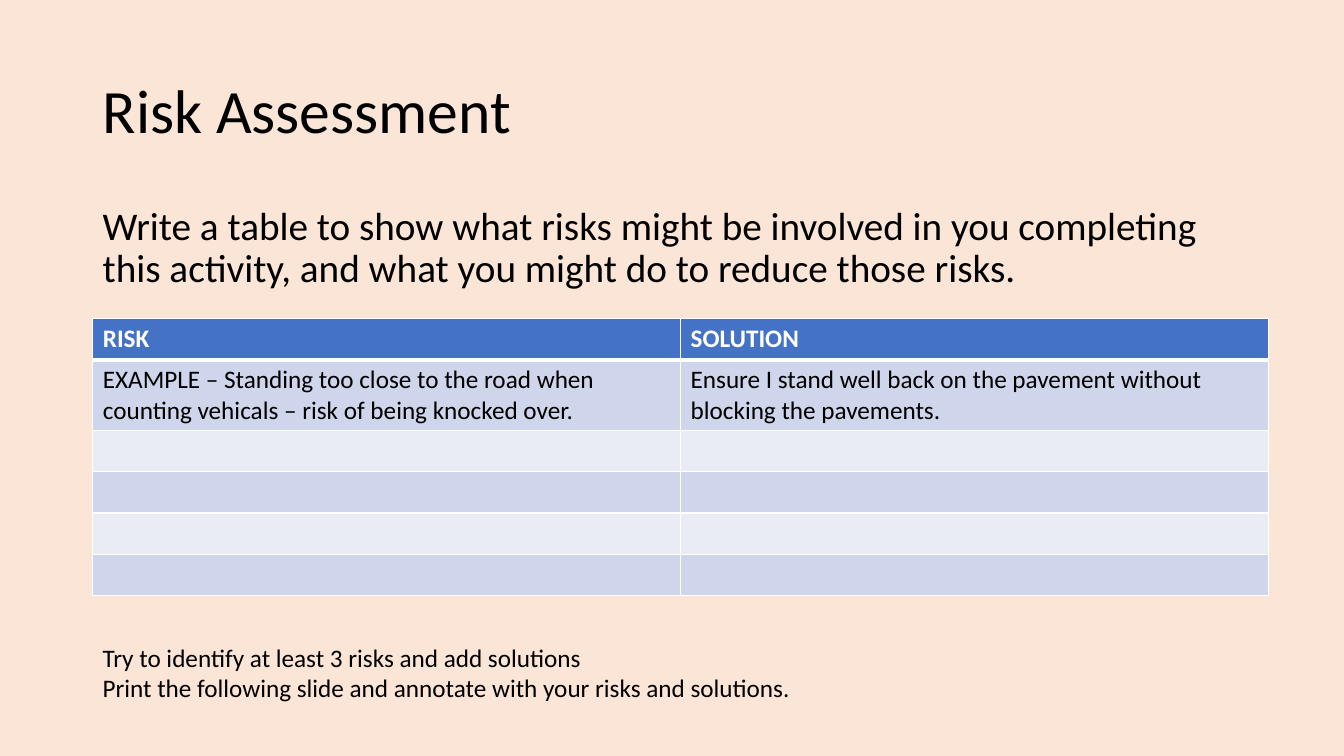
from dataclasses import dataclass

from lxml import etree
from pptx import Presentation
from pptx.dml.color import RGBColor
from pptx.enum.text import MSO_ANCHOR
from pptx.oxml.ns import qn
from pptx.slide import Slide
from pptx.table import _Cell
from pptx.text.text import _Paragraph
from pptx.util import Inches, Pt

MIDDLE, TOP = MSO_ANCHOR.MIDDLE, MSO_ANCHOR.TOP
BLANK_LAYOUT = 6
FONT = "Calibri"

PEACH = RGBColor(0xFB, 0xE5, 0xD6)
BLACK = RGBColor(0x00, 0x00, 0x00)
WHITE = RGBColor(0xFF, 0xFF, 0xFF)
HEADER_BLUE = RGBColor(0x44, 0x72, 0xC4)
BAND_DARK = RGBColor(0xCF, 0xD5, 0xEA)
BAND_LIGHT = RGBColor(0xE9, 0xEB, 0xF5)

LEFT = 0.92
ROW_HEIGHT = 0.41
COLUMN_WIDTH = 5.83


@dataclass(frozen=True)
class TextBlock:
    top: float
    width: float
    height: float
    size: int
    lines: tuple[str, ...]
    line_spacing: float = 1.0
    anchor: MSO_ANCHOR = TOP


TEXT_BLOCKS = (
    TextBlock(0.4, 11.5, 1.45, 44, ("Risk Assessment",), 0.9, MIDDLE),
    TextBlock(2, 11.5, 4.76, 28, (
        "Write a table to show what risks might be involved in you completing "
        "this activity, and what you might do to reduce those risks.",
    ), 0.9),
    TextBlock(6.32, 11.67, 0.71, 18, (
        "Try to identify at least 3 risks and add solutions",
        "Print the following slide and annotate with your risks and solutions.",
    )),
)

RISK_ROWS = (
    ("RISK", "SOLUTION"),
    ("EXAMPLE – Standing too close to the road when counting vehicals – risk of being knocked over.",
     "Ensure I stand well back on the pavement without blocking the pavements."),
) + (("", ""),) * 4


def add_run(paragraph: _Paragraph, text: str, size: int, color: RGBColor, bold: bool = False) -> None:
    run = paragraph.add_run()
    run.text = text
    run.font.name = FONT
    run.font.size = Pt(size)
    run.font.bold = bold
    run.font.color.rgb = color


def add_text_block(slide: Slide, block: TextBlock) -> None:
    shape = slide.shapes.add_textbox(
        Inches(LEFT), Inches(block.top), Inches(block.width), Inches(block.height))
    frame = shape.text_frame
    frame.word_wrap = True
    frame.vertical_anchor = block.anchor
    for index, line in enumerate(block.lines):
        paragraph = frame.add_paragraph() if index else frame.paragraphs[0]
        paragraph.line_spacing = block.line_spacing
        add_run(paragraph, line, block.size, BLACK)


def set_borders(cell: _Cell, top: int, bottom: int) -> None:
    """Draw white cell borders; top and bottom are widths in points."""
    properties = cell._tc.get_or_add_tcPr()
    for side, width in (("L", 1), ("R", 1), ("T", top), ("B", bottom)):
        line = etree.SubElement(properties, qn(f"a:ln{side}"), w=str(Pt(width)))
        fill = etree.SubElement(line, qn("a:solidFill"))
        etree.SubElement(fill, qn("a:srgbClr"), val=str(WHITE))


def add_risk_table(slide: Slide) -> None:
    columns = len(RISK_ROWS[0])
    table = slide.shapes.add_table(
        len(RISK_ROWS), columns, Inches(LEFT), Inches(3.16),
        Inches(COLUMN_WIDTH * columns), Inches(ROW_HEIGHT * len(RISK_ROWS))).table
    for row_index, texts in enumerate(RISK_ROWS):
        is_header = row_index == 0
        band = BAND_DARK if row_index % 2 else BAND_LIGHT
        for column_index, text in enumerate(texts):
            cell = table.cell(row_index, column_index)
            set_borders(cell, top=3 if row_index == 1 else 1, bottom=3 if is_header else 1)
            cell.fill.solid()
            cell.fill.fore_color.rgb = HEADER_BLUE if is_header else band
            if text:
                add_run(cell.text_frame.paragraphs[0], text, 18,
                        WHITE if is_header else BLACK, is_header)


def main() -> None:
    presentation = Presentation()
    presentation.slide_width = Inches(13.33)
    presentation.slide_height = Inches(7.5)
    slide = presentation.slides.add_slide(presentation.slide_layouts[BLANK_LAYOUT])
    slide.background.fill.solid()
    slide.background.fill.fore_color.rgb = PEACH

    title, instruction, reminder = TEXT_BLOCKS
    add_text_block(slide, title)
    add_text_block(slide, instruction)
    add_risk_table(slide)
    add_text_block(slide, reminder)
    presentation.save("out.pptx")


if __name__ == "__main__":
    main()
